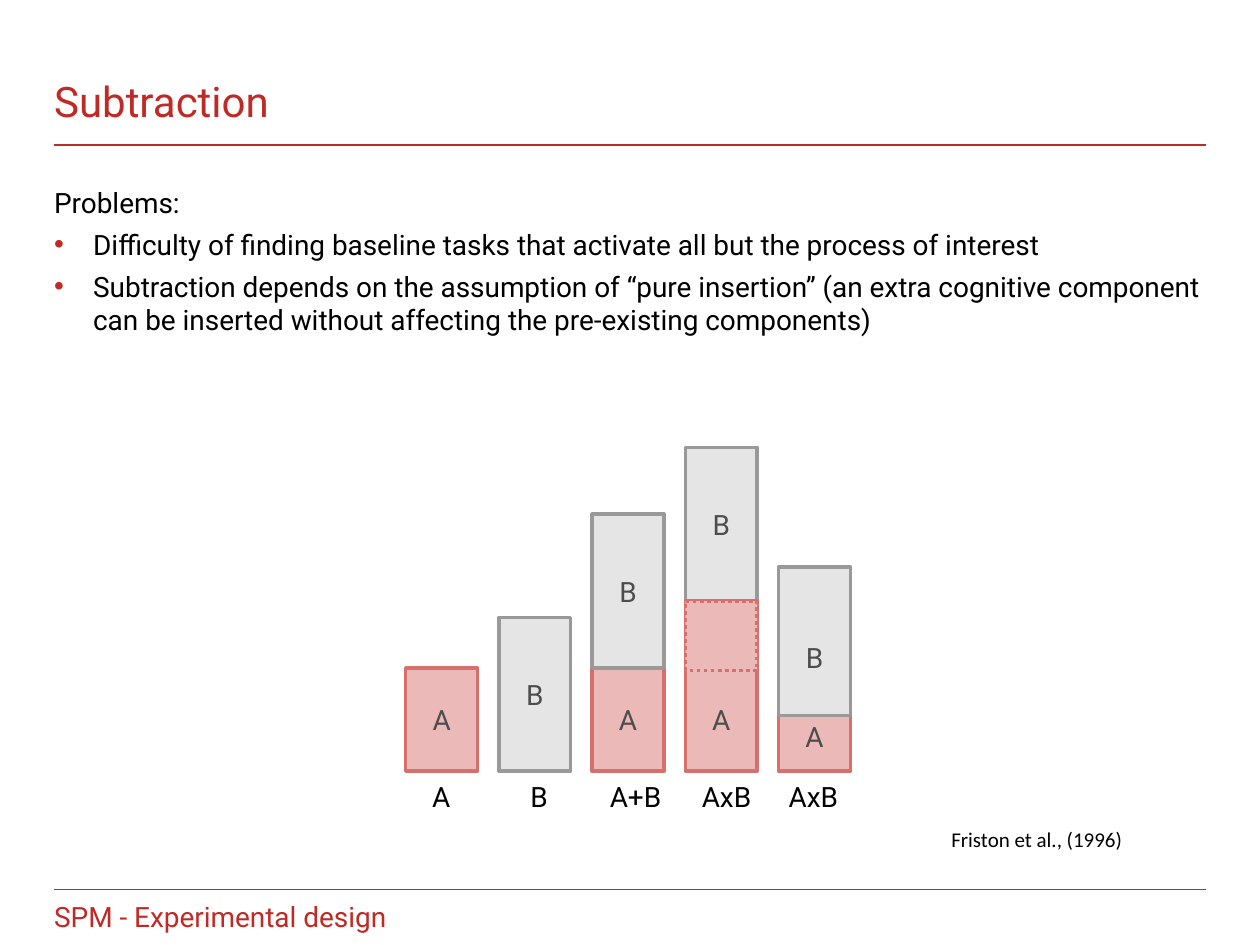
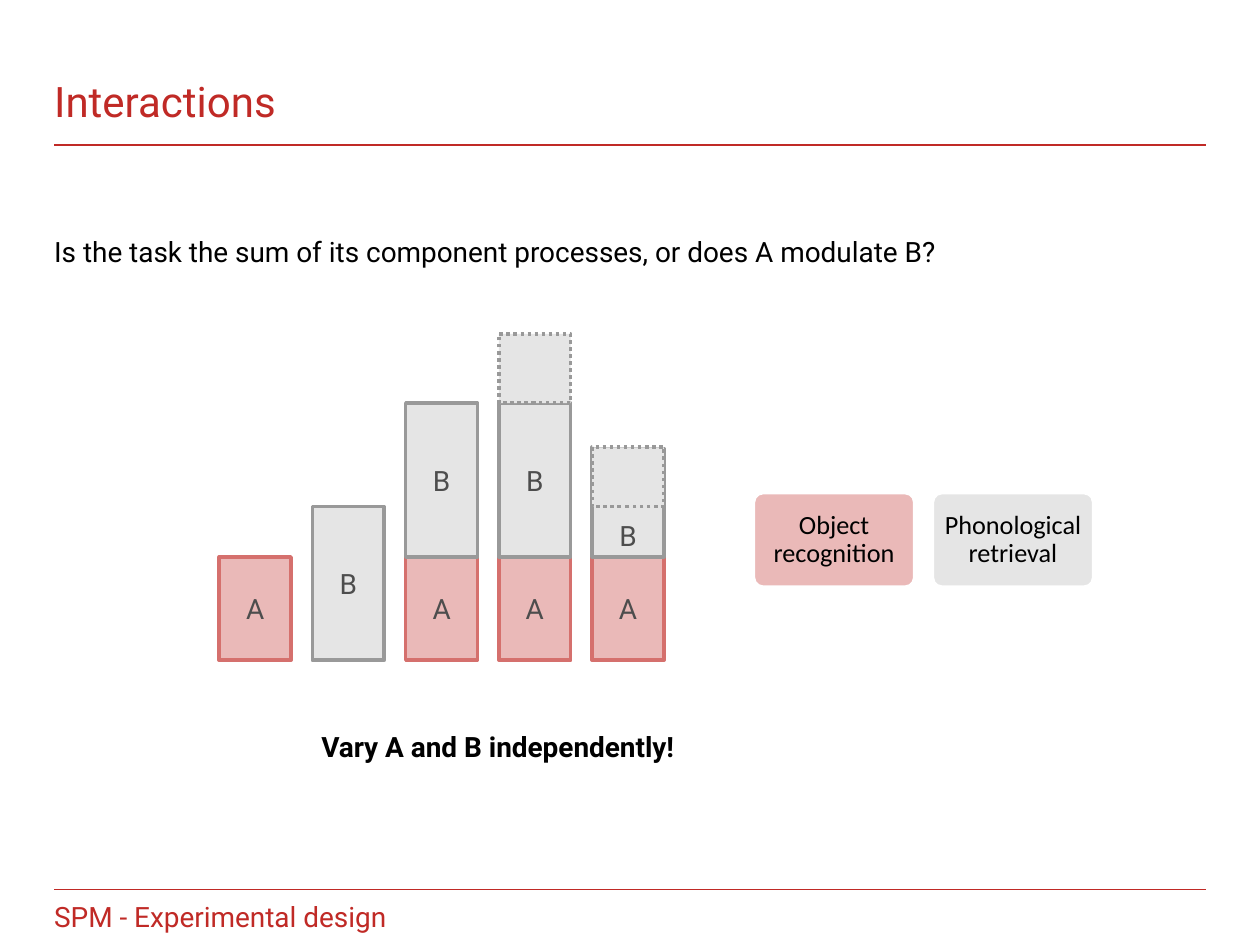
import pptx
import pptx.dml.color
import pptx.enum.dml
import pptx.enum.shapes
import pptx.enum.text
import pptx.oxml.ns
import pptx.util
from lxml import etree
from dataclasses import dataclass

Inches, Pt = pptx.util.Inches, pptx.util.Pt
ALIGN, ANCHOR = pptx.enum.text.PP_ALIGN, pptx.enum.text.MSO_ANCHOR
SHAPE = pptx.enum.shapes.MSO_SHAPE
qn = pptx.oxml.ns.qn


@dataclass(frozen=True)
class Theme:
    red: str = "C02A26"
    black: str = "000000"
    grey_text: str = "4D4D4D"
    white: str = "FFFFFF"
    font: str = "Roboto"
    side_font: str = "Calibri"
    title: int = 24
    body: int = 16
    legend: int = 15
    cite: int = 12
    margin: float = 0.43
    width: float = 9.14


T = Theme()
# process: (fill, outline)
COLOURS = {"A": ("EAB9B8", "D5706D"), "B": ("E5E5E5", "999999")}
BAR_WIDTH, BAR_PITCH = 0.57, 0.74
HEIGHT_A, HEIGHT_B, CHANGE = 0.82, 1.22, 0.55
LINE = 0.26  # height of one line of body text

# Content. Segment: (process, height above baseline, height, label drop in lines),
# listed back to front; a drop of None is a dotted, unlabelled change.
FOOTER = "SPM - Experimental design"
SIMPLE_A = ("A", 0, HEIGHT_A, 0)
SIMPLE_B = ("B", 0, HEIGHT_B, 0)
B_ON_A = ("B", HEIGHT_A, HEIGHT_B, 0)

SUBTRACTION = {
    "title": "Subtraction",
    "body_top": 1.47,
    "body": [
        ("Problems:", False),
        ("Difficulty of finding baseline tasks that activate all but the process of interest", True),
        ("Subtraction depends on the assumption of “pure insertion” (an extra cognitive "
         "component can be inserted without affecting the pre-existing components)", True),
    ],
    "bars_at": (3.22, 6.12),
    "bars": [
        [SIMPLE_A],
        [SIMPLE_B],
        [SIMPLE_A, B_ON_A],
        [("B", 1.35, HEIGHT_B, 0), ("A", 0, 1.35, 2), ("A", 0.8, CHANGE, None)],
        [("A", 0, HEIGHT_A, 1), ("B", 0.44, 1.18, 1)],
    ],
}
INTERACTIONS = {
    "title": "Interactions",
    "body_top": 1.86,
    "body": [("Is the task the sum of its component processes, or does A modulate B?", False)],
    "bars_at": (1.74, 5.24),
    "bars": [
        [SIMPLE_A],
        [SIMPLE_B],
        [SIMPLE_A, B_ON_A],
        [SIMPLE_A, B_ON_A, ("B", HEIGHT_A + HEIGHT_B, CHANGE, None)],
        [SIMPLE_A, ("B", HEIGHT_A, 0.86, 2), ("B", 1.22, 0.47, None)],
    ],
}
TASK_LABELS = [("A", 3.43), ("B", 4.21), ("A+B", 4.84), ("AxB", 5.57), ("AxB", 6.26)]
CITATION = "Friston et al., (1996)"
LEGEND = [("A", "Object recognition"), ("B", "Phonological retrieval")]
CONCLUSION = "Vary A and B independently!"


def rgb(colour):
    return pptx.dml.color.RGBColor.from_string(colour)


def set_frame(tf, anchor=ANCHOR.TOP, side=0, top=0):
    tf.word_wrap = True
    tf.vertical_anchor = anchor
    tf.margin_left = tf.margin_right = Inches(side)
    tf.margin_top, tf.margin_bottom = Inches(top), 0


def add_run(p, text, size=T.body, colour=T.black, font=T.font, bold=False):
    r = p.add_run()
    r.text = text
    r.font.size, r.font.name, r.font.bold = Pt(size), font, bold
    r.font.color.rgb = rgb(colour)


def add_text(slide, text, left, top, width, height, anchor=ANCHOR.TOP, **style):
    sp = slide.shapes.add_textbox(*map(Inches, (left, top, width, height)))
    set_frame(sp.text_frame, anchor)
    add_run(sp.text_frame.paragraphs[0], text, **style)


def add_box(slide, kind, left, top, width, height, fill, line):
    sp = slide.shapes.add_shape(kind, *map(Inches, (left, top, width, height)))
    sp.shadow.inherit = False
    sp.fill.solid()
    sp.fill.fore_color.rgb = rgb(fill)
    sp.line.color.rgb = rgb(line)
    sp.line.width = Pt(2)
    return sp


def add_rule(slide, y):
    line = slide.shapes.add_connector(
        pptx.enum.shapes.MSO_CONNECTOR.STRAIGHT,
        *map(Inches, (T.margin + T.width, y, T.margin, y)))
    line.line.color.rgb = rgb(T.red)
    line.line.width = Pt(1)
    etree.SubElement(line._element.spPr, qn("a:effectLst"))
    # The line's own colour and width apply without the theme style
    line._element.remove(line._element.find(qn("p:style")))


def add_bullet(p):
    pPr = p._p.get_or_add_pPr()
    pPr.set("marL", str(Inches(0.31)))
    pPr.set("indent", str(-Inches(0.31)))
    colour = etree.SubElement(pPr, qn("a:buClr"))
    etree.SubElement(colour, qn("a:srgbClr")).set("val", T.red)
    etree.SubElement(pPr, qn("a:buFont")).set("typeface", "Arial")
    etree.SubElement(pPr, qn("a:buChar")).set("char", "•")


def add_body(slide, lines, top):
    sp = slide.shapes.add_textbox(*map(Inches, (T.margin, top, T.width, 1.5)))
    tf = sp.text_frame
    set_frame(tf)
    for i, (text, bulleted) in enumerate(lines):
        p = tf.add_paragraph() if i else tf.paragraphs[0]
        if i:
            p.space_before = Pt(0.3 * T.body)
        if bulleted:
            add_bullet(p)
        add_run(p, text)


def add_bars(slide, bars, left, baseline):
    for i, segments in enumerate(bars):
        for process, base, height, drop in segments:
            sp = add_box(slide, SHAPE.RECTANGLE, left + i * BAR_PITCH,
                         baseline - base - height, BAR_WIDTH, height, *COLOURS[process])
            if drop is None:
                sp.line.dash_style = pptx.enum.dml.MSO_LINE.ROUND_DOT
                continue
            set_frame(sp.text_frame, ANCHOR.MIDDLE, 0.08, drop * LINE)
            p = sp.text_frame.paragraphs[0]
            p.alignment = ALIGN.CENTER
            add_run(p, process, colour=T.grey_text)


def add_legend(slide, left, top):
    for i, (process, text) in enumerate(LEGEND):
        sp = add_box(slide, SHAPE.ROUNDED_RECTANGLE, left + i * 1.42, top, 1.28, 0.75,
                     COLOURS[process][0], T.white)
        sp.adjustments[0] = 0.1
        set_frame(sp.text_frame, ANCHOR.MIDDLE, 0.02)
        p = sp.text_frame.paragraphs[0]
        p.alignment, p.line_spacing = ALIGN.CENTER, 0.9
        add_run(p, text, size=T.legend, font=T.side_font)


def add_slide(prs, content):
    slide = prs.slides.add_slide(prs.slide_layouts[6])
    # Shared rules, footer and title
    for y in (1.15, 7.06):
        add_rule(slide, y)
    add_text(slide, FOOTER, T.margin, 7.14, 4.39, 0.24, colour=T.red)
    add_text(slide, content["title"], T.margin, 0.13, 7.56, 0.87, ANCHOR.BOTTOM,
             size=T.title, colour=T.red)
    # Text and stacked bars
    add_body(slide, content["body"], content["body_top"])
    add_bars(slide, content["bars"], *content["bars_at"])
    return slide


def main():
    prs = pptx.Presentation()
    prs.slide_width, prs.slide_height = Inches(10), Inches(7.5)

    # Subtraction: task names under the bars and the source
    slide = add_slide(prs, SUBTRACTION)
    for text, left in TASK_LABELS:
        add_text(slide, text, left, 6.19, 0.6, 0.31)
    add_text(slide, CITATION, 7.55, 6.56, 1.6, 0.2, size=T.cite, font=T.side_font)

    # Interactions: legend and conclusion
    slide = add_slide(prs, INTERACTIONS)
    add_legend(slide, 5.98, 3.91)
    add_text(slide, CONCLUSION, 2.55, 5.79, 3.5, 0.3, bold=True)

    prs.save("out.pptx")


if __name__ == "__main__":
    main()
